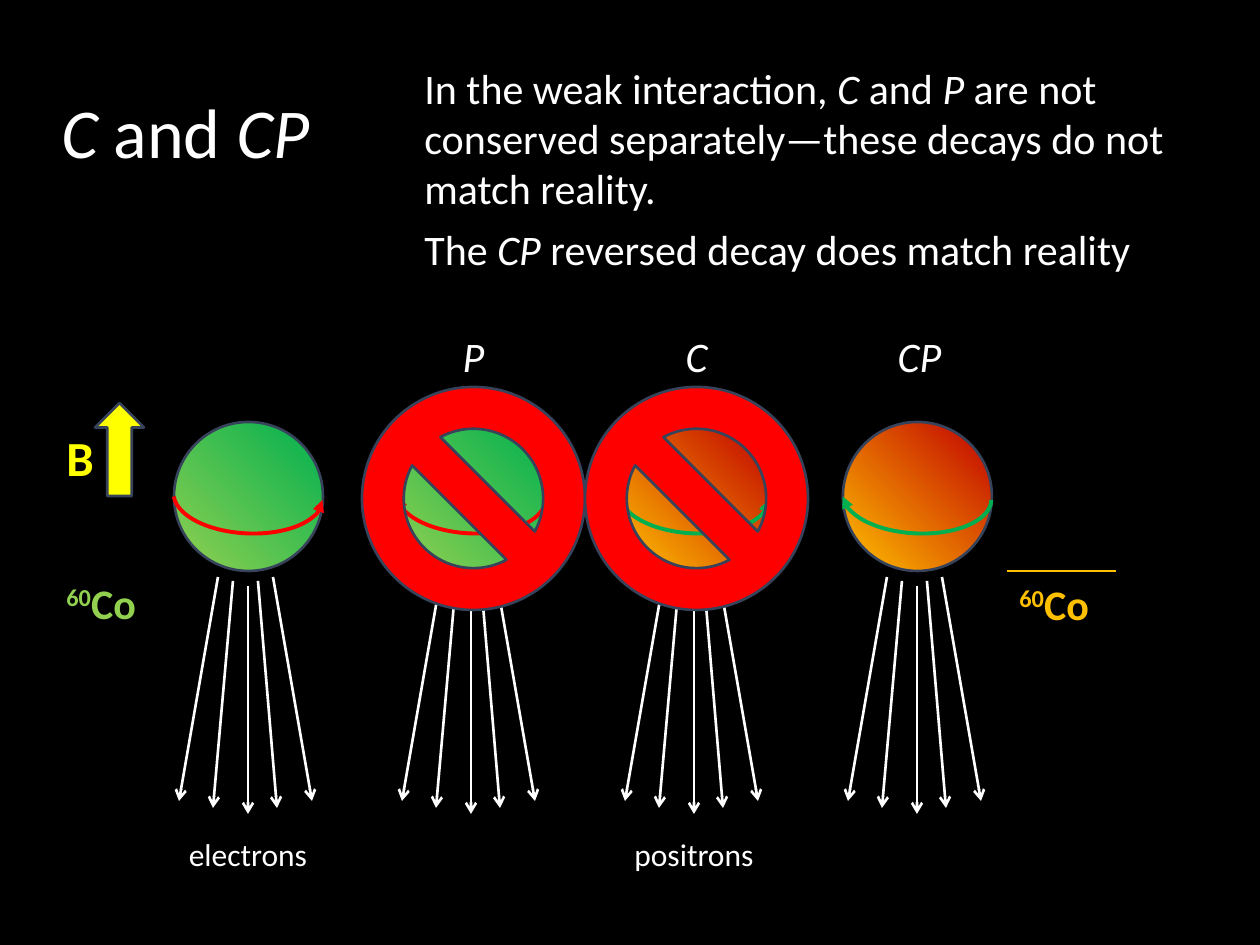
from dataclasses import dataclass

from lxml import etree
from pptx import Presentation
from pptx import util as u
from pptx.dml.color import RGBColor
from pptx.enum import shapes, text
from pptx.oxml.ns import qn

PX = 914400 // 126


@dataclass(frozen=True)
class Theme:
    font: str = "Calibri"
    back: str = "000000"
    ink: str = "FFFFFF"
    outline: str = "37435A"
    red: str = "FF0000"
    yellow: str = "FFFF00"
    green: str = "00B050"
    lime: str = "92D050"
    crimson: str = "C00000"
    amber: str = "FFC000"
    title: int = 40
    field: int = 28
    body: int = 24
    caption: int = 18
    thin: float = 1.5
    thick: float = 2.25


T = Theme()
SHAPE = shapes.MSO_SHAPE
CENTER = text.PP_ALIGN.CENTER


def px(*values):
    return [u.Emu(v * PX) for v in values]


def rgb(color):
    return RGBColor.from_string(color)


def set_line(sp, color, width, ends=None):
    """Style a line; ends maps headEnd or tailEnd to an arrowhead type."""
    sp.line.color.rgb = rgb(color)
    sp.line.width = u.Pt(width)
    ln = sp.line._get_or_add_ln()
    for end, kind in (ends or {}).items():
        etree.SubElement(ln, qn(f"a:{end}"), type=kind)


def add_text(parent, box, *paragraphs, size=T.body, color=T.ink, bold=False,
             align=None, anchor=text.MSO_ANCHOR.TOP, grow=True, before=0,
             after=0, sup=""):
    """Write paragraphs, with *starred* parts in italics and sup raised in front."""
    tf = parent.add_textbox(*px(*box)).text_frame
    tf.word_wrap = True
    tf.vertical_anchor = anchor
    if grow:
        tf.auto_size = text.MSO_AUTO_SIZE.SHAPE_TO_FIT_TEXT
    for i, content in enumerate(paragraphs):
        p = tf.paragraphs[0] if i == 0 else tf.add_paragraph()
        p.alignment = align
        p.space_before, p.space_after = u.Pt(before), u.Pt(after)
        runs = [(part, n % 2 == 1, False) for n, part in enumerate(content.split("*"))]
        for part, italic, raised in [(sup, False, True)] + runs:
            if not part:
                continue
            r = p.add_run()
            r.text = part
            r.font.name, r.font.size = T.font, u.Pt(size)
            r.font.bold, r.font.italic = bold, italic
            r.font.color.rgb = rgb(color)
            if raised:
                r._r.get_or_add_rPr().set("baseline", "30000")


def add_shape(parent, kind, box, fill=None, line=T.outline, width=T.thin, ends=None):
    sp = parent.add_shape(kind, *px(*box))
    sp.shadow.inherit = False
    if fill is None:
        sp.fill.background()
    elif isinstance(fill, tuple):
        sp.fill.gradient()
        sp.fill.gradient_angle = 225
        for stop, color in zip(sp.fill.gradient_stops, fill):
            stop.color.rgb = rgb(color)
    else:
        sp.fill.solid()
        sp.fill.fore_color.rgb = rgb(fill)
    set_line(sp, line, width, ends)
    return sp


def add_line(parent, start, end, color=T.ink, ends=None):
    sp = parent.add_connector(shapes.MSO_CONNECTOR.STRAIGHT, *px(*start, *end))
    etree.SubElement(sp._element.spPr, qn("a:effectLst"))
    set_line(sp, color, T.thin, ends)
    # the effect list has to follow the line in the schema
    sp._element.spPr.append(sp._element.spPr.find(qn("a:effectLst")))


def add_decay(parent, x, y, size, fill, spin, spin_end):
    """Spinning nucleus with its rays, in a group whose top left is (x, y)."""
    group = parent.add_group_shape().shapes
    add_shape(group, SHAPE.OVAL, (x, y, size, size), fill)
    arc = add_shape(group, SHAPE.ARC, (x + size // 4, y, size // 2, size),
                    line=spin, width=T.thick, ends={spin_end: "triangle"})
    arc.rotation = 92.8
    arc.adjustments[0], arc.adjustments[1] = 162, 52.28
    mid = x + size // 2
    rays = [(0, 0, 164, 392), (10, 29, 159, 386), (25, 64, 155, 379),
            (-30, -69, 155, 379), (-15, -35, 159, 386)]
    for dx1, dx2, dy1, dy2 in rays:
        add_line(group, (mid + dx1, y + dy1), (mid + dx2, y + dy2),
                 ends={"tailEnd": "arrow"})


def add_decay_row(parent, x, y, pitch):
    """The decay with its P, C and CP versions, labelled; P and C are forbidden."""
    size, ban = 149, 223
    matter, antimatter = (T.green, T.lime), (T.crimson, T.amber)
    versions = [("", matter, T.red, "headEnd", "electrons"),
                ("P", matter, T.red, "tailEnd", ""),
                ("C", antimatter, T.green, "headEnd", "positrons"),
                ("CP", antimatter, T.green, "tailEnd", "")]
    for i, (name, fill, spin, spin_end, emitted) in enumerate(versions):
        left = x + i * pitch
        add_decay(parent, left, y, size, fill, spin, spin_end)
        if name:
            add_text(parent, (left + 15, y - 98, 123, 63), f"*{name}*", align=CENTER)
        if emitted:
            add_text(parent, (left - 30, y + 407, 208, 50), emitted,
                     size=T.caption, align=CENTER)
    for i in (1, 2):
        add_shape(parent, SHAPE.NO_SYMBOL, (x + i * pitch - 35, y - 35, ban, ban), T.red)


def add_field(parent, x, y):
    add_shape(parent, SHAPE.UP_ARROW, (x + 41, y, 49, 93), T.yellow)
    add_text(parent, (x, y + 18, 59, 72), "B", size=T.field, color=T.yellow, bold=True)


def add_cobalt(parent, x, y, color, anti=False):
    add_text(parent, (x, y, 110, 63), "Co", sup="60", color=color, bold=True)
    if anti:
        add_line(parent, (x, y - 1), (x + 109, y - 1), color)


def add_heading(parent, x, y):
    add_text(parent, (x, y, 1058, 147), "*C* and *CP*", size=T.title,
             anchor=text.MSO_ANCHOR.BOTTOM, grow=False, before=4)
    add_text(parent, (x + 363, y + 24, 804, 227),
             "In the weak interaction, *C* and *P* are not conserved "
             "separately—these decays do not match reality.",
             "The *CP* reversed decay does match reality", after=6)


def main():
    prs = Presentation()
    prs.slide_width, prs.slide_height = u.Inches(10), u.Inches(7.5)
    slide = prs.slides.add_slide(prs.slide_layouts[6])
    slide.background.fill.solid()
    slide.background.fill.fore_color.rgb = rgb(T.back)
    add_heading(slide.shapes, 49, 32)
    add_field(slide.shapes, 54, 403)
    add_cobalt(slide.shapes, 54, 571, T.lime)
    add_decay_row(slide.shapes, 174, 422, 223)
    add_cobalt(slide.shapes, 1007, 572, T.amber, anti=True)
    prs.save("out.pptx")


if __name__ == "__main__":
    main()
